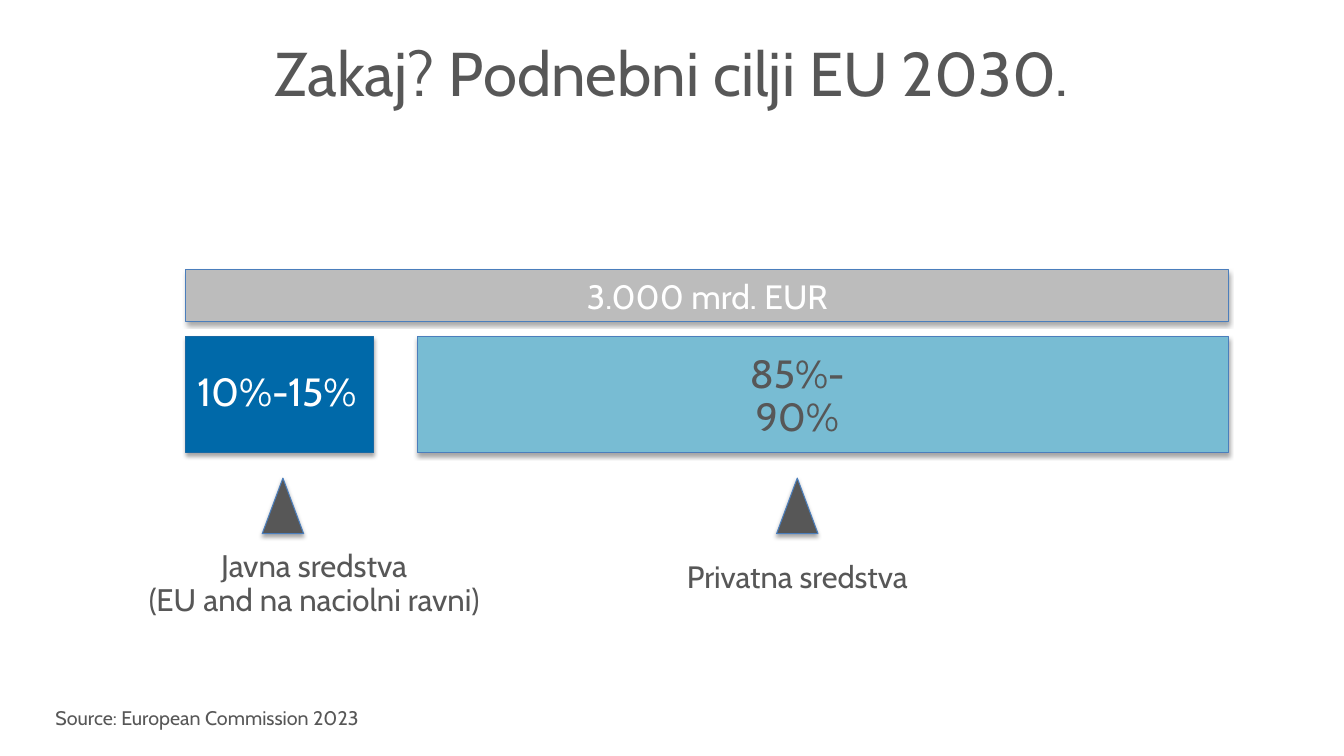
from lxml import etree
from pptx import Presentation
from pptx.dml.color import RGBColor
from pptx.enum.shapes import MSO_SHAPE
from pptx.enum.text import MSO_ANCHOR, PP_ALIGN
from pptx.oxml.ns import qn
from pptx.util import Inches, Pt

RECTANGLE, TRIANGLE = MSO_SHAPE.RECTANGLE, MSO_SHAPE.ISOSCELES_TRIANGLE
MIDDLE = MSO_ANCHOR.MIDDLE
CENTER, LEFT = PP_ALIGN.CENTER, PP_ALIGN.LEFT

FONT = "Cabin"
COLORS = {
    "text": "575757", "white": "FFFFFF", "total": "BCBCBC", "public": "0069A9",
    "private": "78BCD3", "edge": "4B7EBC", "public_edge": "1969A4", "shadow": "000000",
}

TITLE = "Zakaj? Podnebni cilji EU 2030."
TOTAL = "3.000 mrd. EUR"
SOURCE = "Source: European Commission 2023"

SLIDE_W, SLIDE_H = 13.3, 7.48
BAR_LEFT, BAR_W = 1.84, 10.32
BAR_RIGHT = BAR_LEFT + BAR_W
TOTAL_TOP, TOTAL_H = 2.67, 0.51
SHARE_TOP, SHARE_H = 3.33, 1.15
MARKER_TOP, MARKER_W, MARKER_H = 4.73, 0.41, 0.55
LABEL_H = 0.82
PERCENT_W = 1.86

FUNDS = [
    {"percent": "10%-15%", "label": "Javna sredstva\n(EU and na naciolni ravni)",
     "fill": "public", "edge": "public_edge", "percent_color": "white",
     "left": BAR_LEFT, "width": 1.86, "marker_center": 2.8,
     "percent_at": (1.81, 3.49), "label_at": (1.23, 5.37), "label_w": 3.76, "size": 22.2},
    {"percent": "85%-90%", "label": "Privatna sredstva",
     "fill": "private", "edge": "edge", "percent_color": "text",
     "left": 4.13, "width": BAR_RIGHT - 4.13, "marker_center": 7.89,
     "percent_at": (6.96, 3.52), "label_at": (6.33, 5.31), "label_w": 3.12, "size": 22},
]


def rgb(color):
    return RGBColor.from_string(COLORS[color])


def write(holder, text, size, color, align=CENTER, spacing=0.9):
    frame = holder.text_frame
    frame.word_wrap = True
    frame.vertical_anchor = MIDDLE
    frame.text = text
    for paragraph in frame.paragraphs:
        paragraph.alignment = align
        paragraph.line_spacing = spacing
        for run in paragraph.runs:
            run.font.name = FONT
            run.font.size = Pt(size)
            run.font.color.rgb = rgb(color)


def add_text(slide, at, text, size, color, **style):
    write(slide.shapes.add_textbox(*map(Inches, at)), text, size, color, **style)


def add_block(slide, kind, at, fill, edge="edge"):
    block = slide.shapes.add_shape(kind, *map(Inches, at))
    block.fill.solid()
    block.fill.fore_color.rgb = rgb(fill)
    block.line.color.rgb = rgb(edge)
    block.line.width = Pt(0.75)
    block.shadow.inherit = False
    effects = block.element.spPr.find(qn("a:effectLst"))
    shadow = etree.SubElement(effects, qn("a:outerShdw"), blurRad=str(Pt(3.1)),
                              dist=str(Pt(1.8)), dir="5400000", rotWithShape="0")
    tint = etree.SubElement(shadow, qn("a:srgbClr"), val=COLORS["shadow"])
    etree.SubElement(tint, qn("a:alpha"), val="35000")
    return block


def main():
    deck = Presentation()
    deck.slide_width, deck.slide_height = Inches(SLIDE_W), Inches(SLIDE_H)
    slide = deck.slides.add_slide(deck.slide_layouts[6])

    add_text(slide, (0.91, 0.35, 11.47, 0.82), TITLE, 44, "text")
    total = add_block(slide, RECTANGLE, (BAR_LEFT, TOTAL_TOP, BAR_W, TOTAL_H), "total")
    write(total, TOTAL, 24, "white", spacing=1.0)

    for fund in FUNDS:
        add_block(slide, RECTANGLE, (fund["left"], SHARE_TOP, fund["width"], SHARE_H),
                  fund["fill"], fund["edge"])
        add_text(slide, (*fund["percent_at"], PERCENT_W, LABEL_H),
                 fund["percent"], 28, fund["percent_color"])
        marker_left = fund["marker_center"] - MARKER_W / 2
        add_block(slide, TRIANGLE, (marker_left, MARKER_TOP, MARKER_W, MARKER_H), "text")
        add_text(slide, (*fund["label_at"], fund["label_w"], LABEL_H),
                 fund["label"], fund["size"], "text")

    add_text(slide, (0.45, 6.93, 4.8, 0.34), SOURCE, 14, "text", align=LEFT, spacing=1.0)
    deck.save("out.pptx")


if __name__ == "__main__":
    main()
